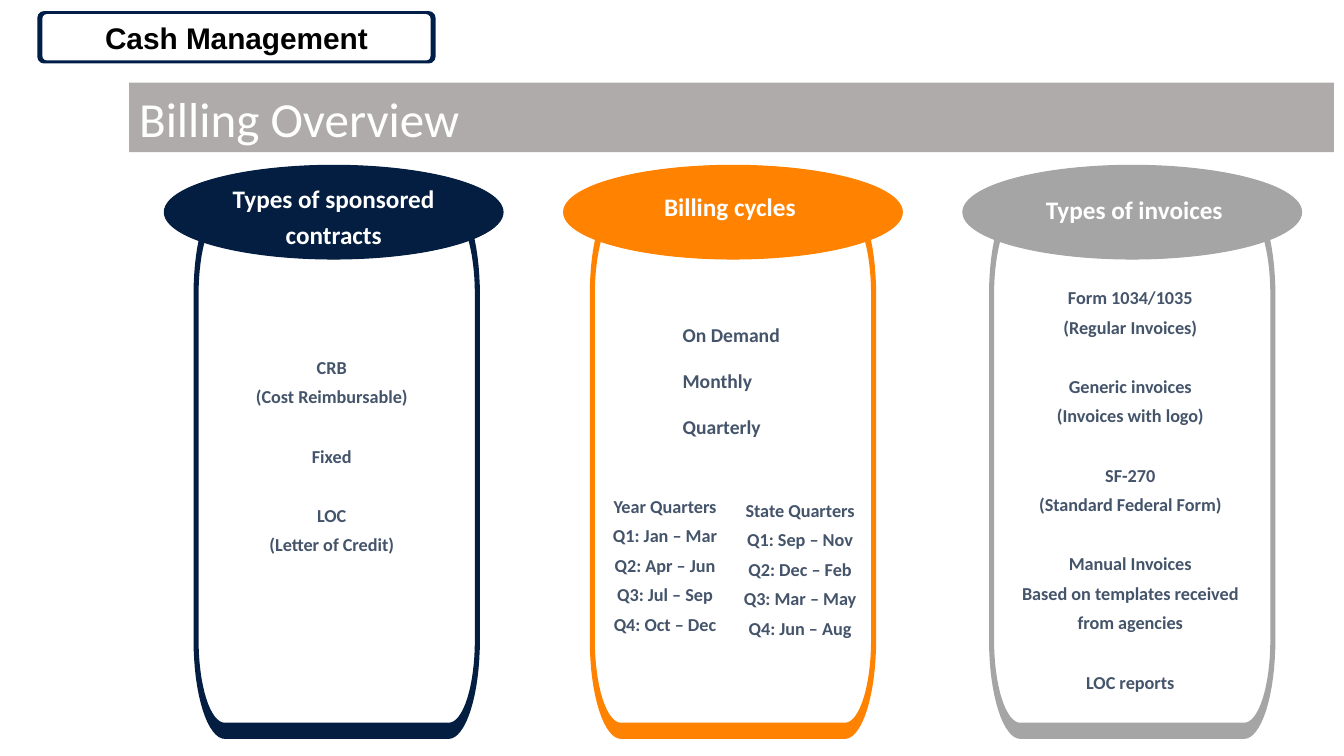
"""Build the Billing Overview slide of a cash management deck."""
import math

import pptx
import pptx.dml.color
import pptx.enum.shapes
import pptx.enum.text
import pptx.util

Inches = pptx.util.Inches
Pt = pptx.util.Pt
ALIGN = pptx.enum.text.PP_ALIGN
ANCHOR = pptx.enum.text.MSO_ANCHOR
PRESET = pptx.enum.shapes.MSO_SHAPE

COLOURS = {
    "navy": "041E41",
    "orange": "FF8300",
    "grey": "A5A5A5",
    "band": "AFABAB",
    "badge": "001E47",
    "body": "44546A",
    "white": "FFFFFF",
    "black": "000000",
}

CONTRACTS = [["CRB", "(Cost Reimbursable)"], ["Fixed"], ["LOC", "(Letter of Credit)"]]
CYCLES = [["On Demand"], ["Monthly"], ["Quarterly"]]
YEAR_QUARTERS = [["Year Quarters", "Q1: Jan – Mar", "Q2: Apr – Jun",
                  "Q3: Jul – Sep", "Q4: Oct – Dec"]]
STATE_QUARTERS = [["State Quarters", "Q1: Sep – Nov", "Q2: Dec – Feb",
                   "Q3: Mar – May", "Q4: Jun – Aug"]]
INVOICES = [
    ["Form 1034/1035", "(Regular Invoices)"],
    ["Generic invoices", "(Invoices with logo)"],
    ["SF-270", "(Standard Federal Form)"],
    ["Manual Invoices", "Based on templates received", "from agencies"],
    ["LOC reports"],
]


def colour(name):
    return pptx.dml.color.RGBColor.from_string(COLOURS[name])


def add_run(paragraph, text, size, ink, bold=True, face="Calibri"):
    run = paragraph.add_run()
    run.text = text
    run.font.name = face
    run.font.size = Pt(size)
    run.font.bold = bold
    run.font.color.rgb = colour(ink)


def paint(shape, fill, line=None):
    shape.shadow.inherit = False
    shape.fill.solid()
    shape.fill.fore_color.rgb = colour(fill)
    if line:
        shape.line.color.rgb = colour(line)
        shape.line.width = Pt(0.75)
    else:
        shape.line.fill.background()


def add_preset(slide, preset, box, fill, line=None, rounding=None):
    shape = slide.shapes.add_shape(preset, *map(Inches, box))
    paint(shape, fill, line)
    if rounding is not None:
        shape.adjustments[0] = rounding
    return shape


def rounded_outline(left, top, width, height, rx, ry, steps=16):
    """Return the points of a rectangle with elliptical corners."""
    corners = [
        (left + width - rx, top + height - ry),
        (left + rx, top + height - ry),
        (left + rx, top + ry),
        (left + width - rx, top + ry),
    ]
    points = []
    for quarter, (cx, cy) in enumerate(corners):
        for step in range(steps + 1):
            angle = math.pi / 2 * (quarter + step / steps)
            points.append((Inches(cx + rx * math.cos(angle)),
                           Inches(cy + ry * math.sin(angle))))
    return points


def add_jar(slide, left, lid_left, fill):
    outer = rounded_outline(left, 1.94, 2.84, 5.39, 0.31, 0.98)
    inner = rounded_outline(left + 0.05, 2.1, 2.74, 5.07, 0.26, 0.82)
    builder = slide.shapes.build_freeform(*outer[0])
    builder.add_line_segments(outer[1:], close=True)
    builder.move_to(*inner[0])
    builder.add_line_segments(inner[1:], close=True)
    paint(builder.convert_to_shape(), fill)
    add_preset(slide, PRESET.OVAL, (lid_left, 1.64, 3.36, 0.93), fill, fill)


def add_text(slide, box, groups, size=13, ink="body", align=ALIGN.CENTER,
             spacing=1.2, line_gap=2.3, group_gap=23.6):
    """Add a text box of line groups, set apart by paragraph spacing."""
    frame = slide.shapes.add_textbox(*map(Inches, box)).text_frame
    frame.word_wrap = True
    frame.vertical_anchor = ANCHOR.TOP
    frame.margin_left = frame.margin_right = Inches(0.05)
    frame.margin_top = frame.margin_bottom = Inches(0.03)
    paragraph = None
    for group in groups:
        for index, line in enumerate(group):
            if paragraph is None:
                paragraph = frame.paragraphs[0]
            else:
                paragraph = frame.add_paragraph()
                paragraph.space_before = Pt(line_gap if index else group_gap)
            paragraph.alignment = align
            paragraph.line_spacing = spacing
            add_run(paragraph, line, size, ink)


def add_title(slide, text):
    title = slide.shapes.title
    title.left, title.top, title.width, title.height = map(
        Inches, (1.28, 0.82, 11.95, 0.69))
    title.fill.solid()
    title.fill.fore_color.rgb = colour("band")
    frame = title.text_frame
    frame.auto_size = pptx.enum.text.MSO_AUTO_SIZE.NONE
    frame.vertical_anchor = ANCHOR.MIDDLE
    paragraph = frame.paragraphs[0]
    paragraph.alignment = ALIGN.LEFT
    paragraph.line_spacing = 1.0
    add_run(paragraph, text, 35, "white", bold=False)


def add_badge(slide, text):
    add_preset(slide, PRESET.ROUNDED_RECTANGLE, (0.37, 0.11, 3.95, 0.52),
               "badge", rounding=0.13)
    face = add_preset(slide, PRESET.ROUNDED_RECTANGLE, (0.42, 0.14, 3.85, 0.46),
                      "white", rounding=0.1)
    frame = face.text_frame
    frame.vertical_anchor = ANCHOR.MIDDLE
    frame.paragraphs[0].alignment = ALIGN.CENTER
    add_run(frame.paragraphs[0], text, 21.3, "black", face="Arial")


def main():
    deck = pptx.Presentation()
    deck.slide_width, deck.slide_height = Inches(13.33), Inches(7.5)
    slide = deck.slides.add_slide(deck.slide_layouts[5])
    add_title(slide, "Billing Overview")

    jars = [
        ("navy", 1.92, "Types of sponsored contracts", (2.11, 1.73, 2.4, 0.8)),
        ("orange", 5.85, "Billing cycles", (6.44, 1.81, 1.6, 0.43)),
        ("grey", 9.81, "Types of invoices", (10.2, 1.84, 2.1, 0.43)),
    ]
    for index, (fill, left, heading, heading_box) in enumerate(jars):
        add_jar(slide, left, 1.63 + 3.96 * index, fill)
        add_text(slide, heading_box, [[heading]], size=18, ink="white")

    add_text(slide, (2.0, 3.46, 2.58, 2.1), CONTRACTS)
    add_text(slide, (6.72, 3.17, 1.9, 1.3), CYCLES, size=14, align=ALIGN.LEFT,
             spacing=1.0, group_gap=16.3)
    add_text(slide, (5.92, 4.84, 1.35, 1.6), YEAR_QUARTERS)
    add_text(slide, (7.26, 4.88, 1.35, 1.6), STATE_QUARTERS)
    add_text(slide, (9.79, 2.77, 2.84, 4.3), INVOICES)
    add_badge(slide, "Cash Management")
    deck.save("out.pptx")


if __name__ == "__main__":
    main()
